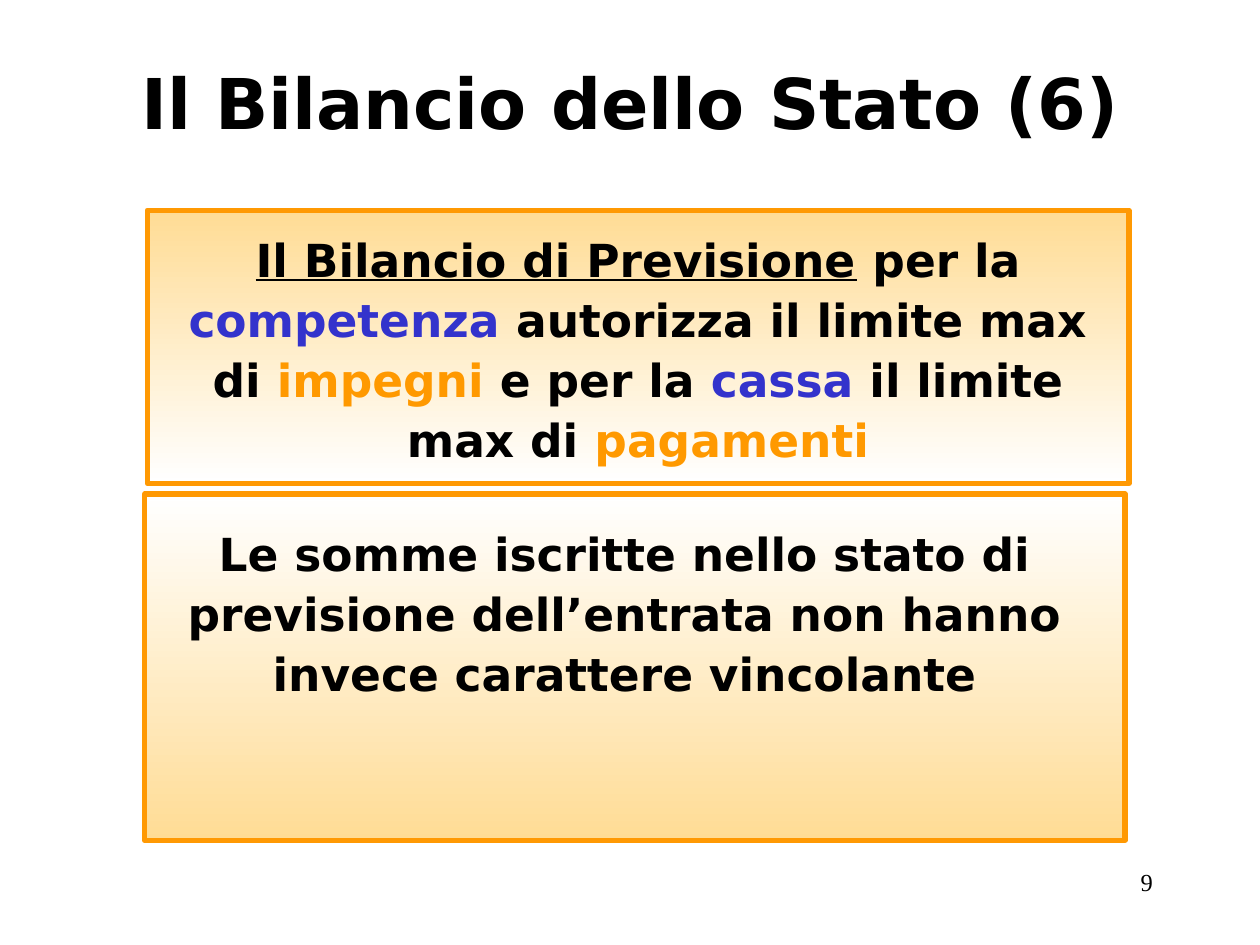
from dataclasses import dataclass

from pptx import Presentation
from pptx.dml.color import RGBColor
from pptx.enum.shapes import MSO_SHAPE
from pptx.enum.text import MSO_ANCHOR, PP_ALIGN
from pptx.util import Cm, Pt


@dataclass(frozen=True)
class Theme:
    font: str = "DejaVu Sans"
    number_font: str = "Times New Roman"
    title_size: int = 40
    body_size: int = 26
    number_size: int = 14
    black: str = "000000"
    white: str = "FFFFFF"
    blue: str = "3333CC"
    orange: str = "FF9900"
    border: str = "FF9903"
    cream: str = "FFDC95"


THEME = Theme()


def add_text(s, box, runs, font=THEME.font, size=THEME.body_size, bold=True,
             align=PP_ALIGN.CENTER, anchor=MSO_ANCHOR.TOP, spacing=None):
    """Add one paragraph; each run is (text, colour, underlined)."""
    tf = s.shapes.add_textbox(*map(Cm, box)).text_frame
    tf.word_wrap = True
    tf.vertical_anchor = anchor
    p = tf.paragraphs[0]
    p.alignment = align
    p.line_spacing = spacing
    for text, color, underline in runs:
        r = p.add_run()
        r.text = text
        r.font.name = font
        r.font.size = Pt(size)
        r.font.bold = bold
        r.font.underline = underline
        r.font.color.rgb = RGBColor.from_string(color)


def add_panel(s, box, top_color, bottom_color):
    """Add a bordered rectangle with a vertical gradient."""
    sp = s.shapes.add_shape(MSO_SHAPE.RECTANGLE, *map(Cm, box))
    sp.shadow.inherit = False
    sp.fill.gradient()
    sp.fill.gradient_angle = 270
    for stop, color in zip(sp.fill.gradient_stops, (top_color, bottom_color)):
        stop.color.rgb = RGBColor.from_string(color)
    sp.line.color.rgb = RGBColor.from_string(THEME.border)
    sp.line.width = Pt(3)


def main():
    t = THEME
    prs = Presentation()
    prs.slide_width, prs.slide_height = Cm(25.4), Cm(19.05)
    s = prs.slides.add_slide(prs.slide_layouts[6])

    # Slide number
    add_text(s, (18.21, 17.35, 5.28, 1.27), [("9", t.black, False)],
             font=t.number_font, size=t.number_size, bold=False,
             align=PP_ALIGN.RIGHT)

    # Lower panel: revenue estimates
    add_panel(s, (2.92, 9.96, 19.76, 6.98), t.white, t.cream)
    add_text(s, (2.54, 10.36, 20.12, 3.94), [
        ("Le somme iscritte nello stato di previsione dell’entrata "
         "non hanno invece carattere vincolante", t.black, False),
    ], spacing=1.1)

    # Upper panel: budget limits
    add_panel(s, (2.97, 4.24, 19.79, 5.51), t.cream, t.white)
    add_text(s, (2.97, 4.45, 19.79, 5.16), [
        ("Il Bilancio di Previsione", t.black, True),
        (" per la ", t.black, False),
        ("competenza", t.blue, False),
        (" autorizza il limite max di ", t.black, False),
        ("impegni ", t.orange, False),
        ("e per la ", t.black, False),
        ("cassa", t.blue, False),
        (" il limite max di ", t.black, False),
        ("pagamenti", t.orange, False),
    ], spacing=1.1)

    # Title
    add_text(s, (0, 1.07, 25.4, 1.96),
             [("Il Bilancio dello Stato (6)", t.black, False)],
             size=t.title_size, anchor=MSO_ANCHOR.MIDDLE)

    prs.save("out.pptx")


if __name__ == "__main__":
    main()
